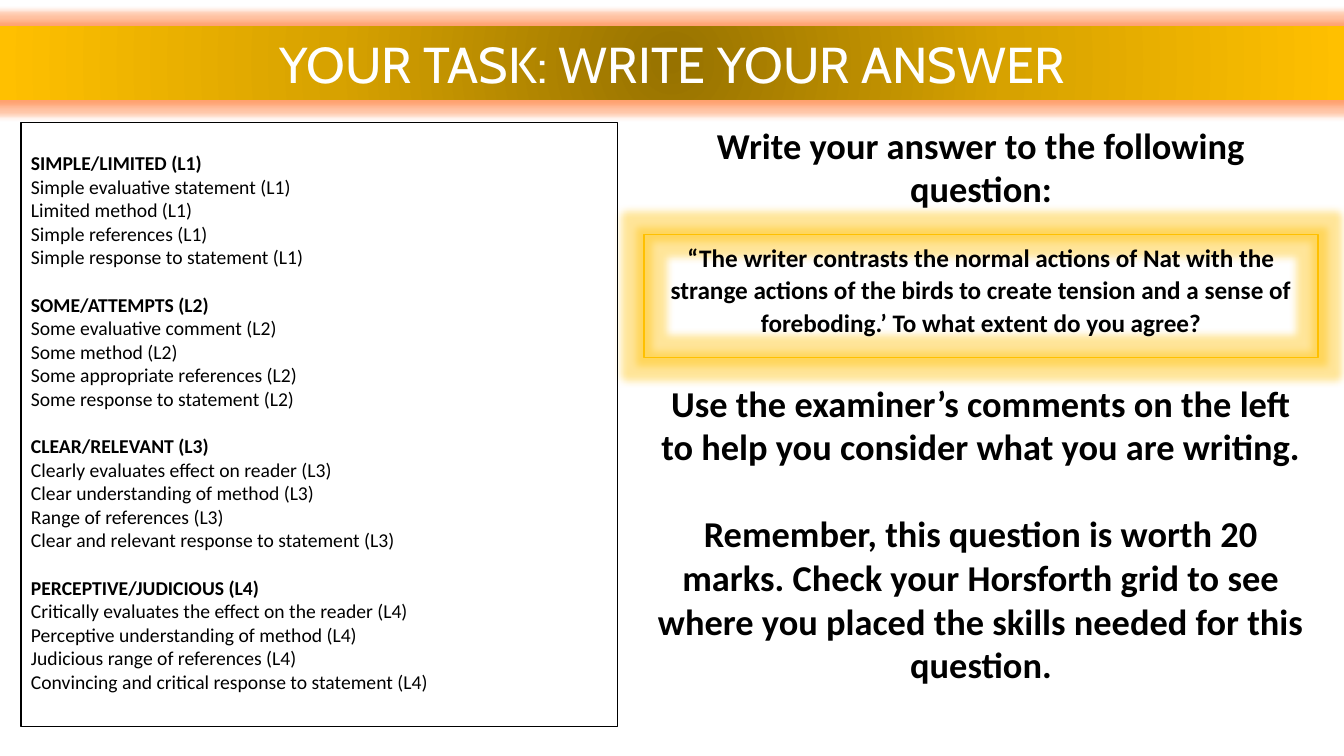
from lxml.etree import SubElement
from pptx import Presentation
from pptx.dml.color import RGBColor
from pptx.enum.shapes import MSO_SHAPE
from pptx.enum.text import MSO_ANCHOR, PP_ALIGN
from pptx.oxml.ns import qn
from pptx.util import Cm, Pt

COLORS = {
    "text": "000000",
    "white": "FFFFFF",
    "gold": "FFC000",
    "gold_mid": "D7A200",
    "gold_dark": "977200",
    "orange": "FF6D1F",
}

LEVELS = [
    ("SIMPLE/LIMITED", [
        "Simple evaluative statement",
        "Limited method",
        "Simple references",
        "Simple response to statement",
    ]),
    ("SOME/ATTEMPTS", [
        "Some evaluative comment",
        "Some method",
        "Some appropriate references",
        "Some response to statement",
    ]),
    ("CLEAR/RELEVANT", [
        "Clearly evaluates effect on reader",
        "Clear understanding of method",
        "Range of references",
        "Clear and relevant response to statement",
    ]),
    ("PERCEPTIVE/JUDICIOUS", [
        "Critically evaluates the effect on the reader",
        "Perceptive understanding of method",
        "Judicious range of references",
        "Convincing and critical response to statement",
    ]),
]

TASK = [
    ("Write your answer to the following question:", 26, 0, 1),
    ("“The writer contrasts the normal actions of Nat with the strange actions "
     "of the birds to create tension and a sense of foreboding.’ "
     "To what extent do you agree?", 18, 21.5, 1.07),
    ("Use the examiner’s comments on the left to help you consider "
     "what you are writing.", 26, 31, 1),
    ("Remember, this question is worth 20 marks. Check your Horsforth grid to see "
     "where you placed the skills needed for this question.", 26, 31, 1),
]


def rgb(name):
    return RGBColor.from_string(COLORS[name])


def add_box(slide, left, top, width, height, line=None, line_width=0.75):
    sp = slide.shapes.add_shape(
        MSO_SHAPE.RECTANGLE, Cm(left), Cm(top), Cm(width), Cm(height))
    sp.shadow.inherit = False
    sp.fill.background()
    if line:
        sp.line.color.rgb = rgb(line)
        sp.line.width = Pt(line_width)
    else:
        sp.line.fill.background()
    tf = sp.text_frame
    tf.word_wrap = True
    tf.vertical_anchor = MSO_ANCHOR.TOP
    return sp


def add_paragraph(tf, text, size, font="Calibri", color="text", bold=False,
                  align=PP_ALIGN.CENTER, before=0, spacing=1):
    p = tf.paragraphs[0] if not tf.paragraphs[0].runs else tf.add_paragraph()
    p.alignment = align
    p.space_before = Pt(before)
    p.line_spacing = spacing
    r = p.add_run()
    r.text = text
    r.font.name = font
    r.font.size = Pt(size)
    r.font.bold = bold
    r.font.color.rgb = rgb(color)


def add_color(parent, name, **mods):
    color = SubElement(parent, qn("a:srgbClr"), val=COLORS[name])
    for tag, value in mods.items():
        SubElement(color, qn(f"a:{tag}"), val=str(value))


def add_glow(sp, name, radius):
    effects = sp._element.spPr.find(qn("a:effectLst"))
    glow = SubElement(effects, qn("a:glow"), rad=str(Pt(radius)))
    add_color(glow, name, alpha=40000)


def fill_radial(sp, names):
    sp.fill.gradient()
    grad = sp._element.spPr.find(qn("a:gradFill"))
    for child in list(grad):
        grad.remove(child)
    stops = SubElement(grad, qn("a:gsLst"))
    for i, name in enumerate(names):
        pos = 100000 * i // (len(names) - 1)
        add_color(SubElement(stops, qn("a:gs"), pos=str(pos)), name)
    radial = SubElement(grad, qn("a:path"), path="circle")
    SubElement(radial, qn("a:fillToRect"),
               {side: "50000" for side in "ltrb"})


def add_question_frame(slide):
    sp = add_box(slide, 16.23, 5.91, 16.99, 3.1, "gold", 1)
    add_glow(sp, "gold", 11)


def add_task(slide):
    sp = add_box(slide, 16.23, 2.97, 16.99, 15.29)
    for text, size, before, spacing in TASK:
        add_paragraph(sp.text_frame, text, size, bold=True,
                      before=before, spacing=spacing)


def add_banner(slide):
    sp = add_box(slide, 0, 0.66, 33.87, 1.85)
    fill_radial(sp, ["gold_dark", "gold_mid", "gold"])
    add_glow(sp, "orange", 8)
    sp.text_frame.vertical_anchor = MSO_ANCHOR.MIDDLE
    add_paragraph(sp.text_frame, "YOUR TASK: WRITE YOUR ANSWER", 36,
                  font="Cabin", color="white")


def add_levels(slide):
    sp = add_box(slide, 0.53, 3.09, 15.04, 15.21, "text")
    tf = sp.text_frame
    tf.margin_top = Cm(0.72)
    for n, (heading, skills) in enumerate(LEVELS, 1):
        add_paragraph(tf, f"{heading} (L{n})", 14, bold=True,
                      align=PP_ALIGN.LEFT, before=17 if n > 1 else 0)
        for skill in skills:
            add_paragraph(tf, f"{skill} (L{n})", 14, align=PP_ALIGN.LEFT)


def main():
    prs = Presentation()
    prs.slide_width, prs.slide_height = Cm(33.87), Cm(19.05)
    slide = prs.slides.add_slide(prs.slide_layouts[6])
    add_question_frame(slide)
    add_task(slide)
    add_banner(slide)
    add_levels(slide)
    prs.save("out.pptx")


if __name__ == "__main__":
    main()
